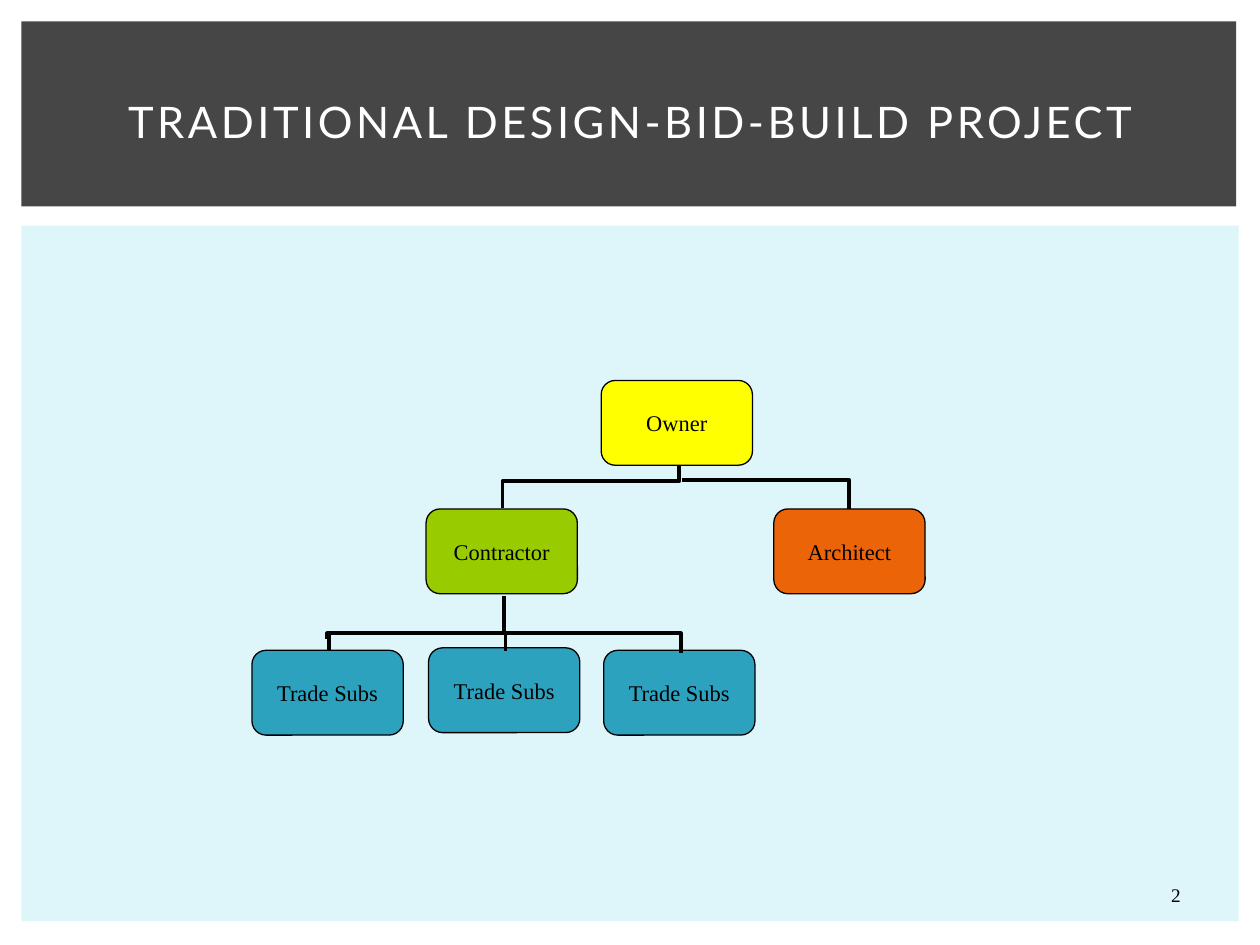
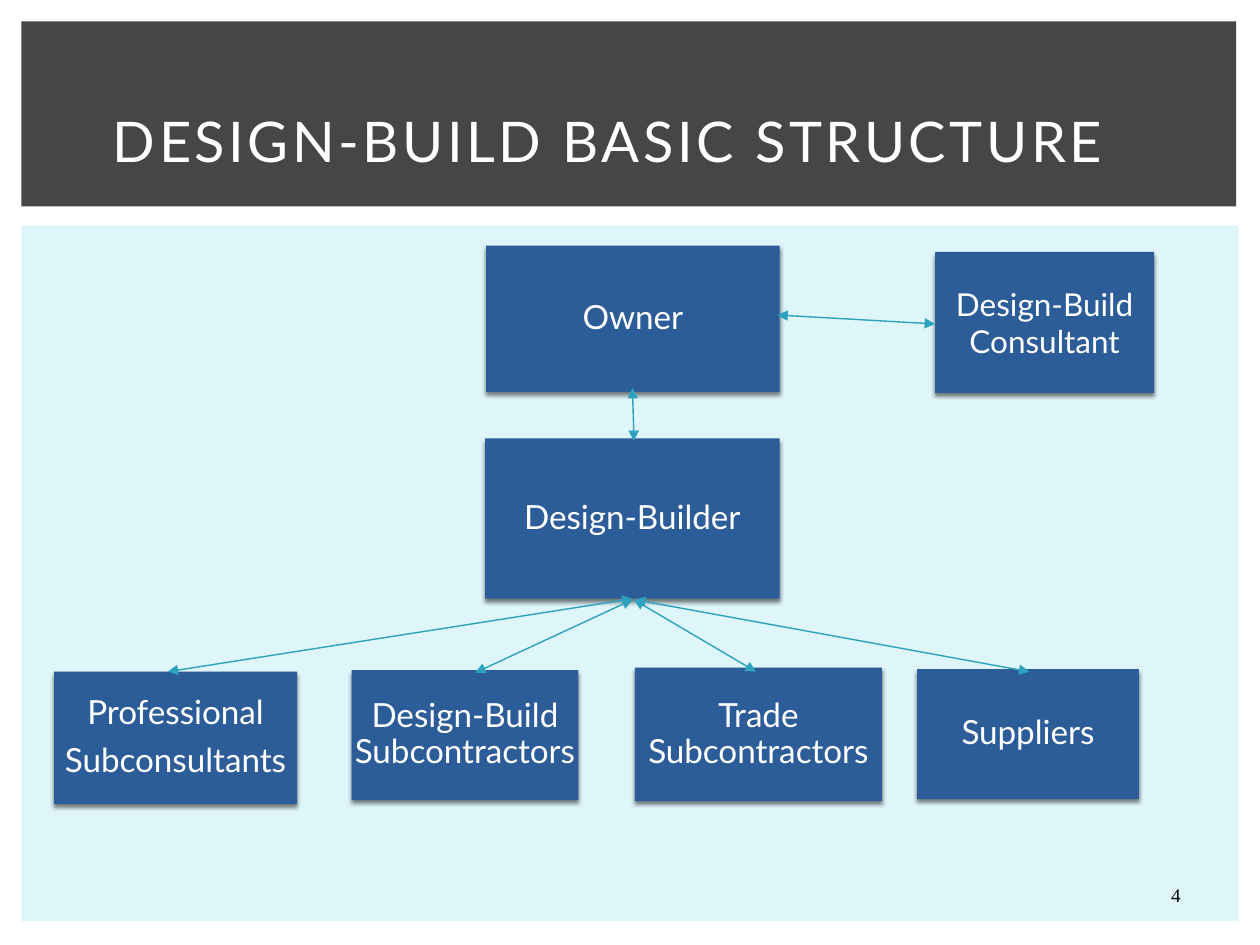
"""Build two slides that compare project delivery structures."""
from lxml import etree
from pptx import Presentation
from pptx import util as u
from pptx.dml.color import RGBColor
from pptx.enum import shapes, text
from pptx.oxml import ns

WHITE = RGBColor(0xFF, 0xFF, 0xFF)
BLACK = RGBColor(0x00, 0x00, 0x00)
CHARCOAL = RGBColor(0x46, 0x46, 0x46)
PALE_BLUE = RGBColor(0xDE, 0xF5, 0xFA)
TEAL = RGBColor(0x2D, 0xA2, 0xBF)
NAVY = RGBColor(0x2C, 0x5D, 0x98)
GREEN = RGBColor(0x99, 0xCC, 0x00)
ORANGE = RGBColor(0xEC, 0x64, 0x08)
YELLOW = RGBColor(0xFF, 0xFF, 0x00)
SANS, SERIF = "Lato", "Times New Roman"

BANDS = [
    ((0.43, 4.55, 24.54, 14.02), PALE_BLUE),
    ((0.43, 0.43, 24.49, 3.73), CHARCOAL),
]
NUMBER_AREA = (22.89, 17.65, 1.63, 0.76)

TRADITIONAL = {
    "title": "TRADITIONAL DESIGN-BID-BUILD PROJECT",
    "title_area": (1.07, 0.99, 23.29, 2.92),
    "title_size": 24.8,
    "number": "2",
}
PARTY_SIZE = (3.05, 1.71)
PARTIES = [
    ("Contractor", (8.59, 10.26), GREEN),
    ("Trade Subs", (5.08, 13.11), TEAL),
    ("Trade Subs", (8.64, 13.06), TEAL),
    ("Trade Subs", (12.17, 13.11), TEAL),
    ("Architect", (15.6, 10.26), ORANGE),
    ("Owner", (12.12, 7.67), YELLOW),
]
ELBOWS = [
    ((6.6, 12.88), (10.16, 12.01), 0.13),
    ((13.72, 12.88), (10.16, 12.01), 0.13),
    ((10.13, 10.24), (13.69, 9.4), 0.64),
    ((17.12, 10.26), (13.74, 9.68), None),
]
DROPS = [
    ((10.19, 12.73), (10.19, 13.13)),
    ((13.72, 12.78), (13.72, 13.16)),
    ((6.63, 12.73), (6.63, 13.13)),
]

DESIGN_BUILD = {
    "title": "DESIGN-BUILD BASIC STRUCTURE",
    "title_area": (1.78, 1.32, 20.96, 3),
    "title_size": 32,
    "number": "4",
}
TEAM_STYLE = {"size": 19, "line_spacing": 0.9, "space_after": 6.65}
CONSULTANT_STYLE = {"size": 18}
TEAM = [
    (["Design-Build Consultant"], (18.85, 5.08, 4.42, 2.84), CONSULTANT_STYLE),
    (["Owner"], (9.8, 4.95, 5.92, 2.95), TEAM_STYLE),
    (["Professional", "Subconsultants"], (1.09, 13.54, 4.9, 2.67), TEAM_STYLE),
    (["Suppliers"], (18.49, 13.49, 4.47, 2.62), TEAM_STYLE),
    (["Design-Builder"], (9.78, 8.84, 5.94, 3.23), TEAM_STYLE),
    (["Trade Subcontractors"], (12.8, 13.46, 4.98, 2.69), TEAM_STYLE),
    (["Design-Build Subcontractors"], (7.09, 13.51, 4.57, 2.62), TEAM_STYLE),
]
ARROWS = [
    ((18.85, 6.53), (15.67, 6.35)),
    ((12.75, 7.82), (12.78, 8.89)),
    ((12.75, 12.07), (3.38, 13.54)),
    ((12.75, 12.09), (9.58, 13.56)),
    ((12.78, 12.09), (15.24, 13.54)),
    ((12.8, 12.09), (20.75, 13.54)),
]


def lengths(values):
    return [u.Cm(value) for value in values]


def add_child(parent, tag, **attributes):
    child = etree.SubElement(parent, ns.qn(tag))
    for name, value in attributes.items():
        child.set(name, str(value))
    return child


def write(shape, paragraphs, size, font=SANS, color=WHITE, spacing=0,
          insets=(0.25, 0.13), wrap=True, line_spacing=None, space_after=None):
    frame = shape.text_frame
    frame.word_wrap = wrap
    frame.vertical_anchor = text.MSO_ANCHOR.MIDDLE
    frame.margin_left = frame.margin_right = u.Cm(insets[0])
    frame.margin_top = frame.margin_bottom = u.Cm(insets[1])
    for index, words in enumerate(paragraphs):
        paragraph = frame.add_paragraph() if index else frame.paragraphs[0]
        paragraph.alignment = text.PP_ALIGN.CENTER
        if line_spacing:
            paragraph.line_spacing = line_spacing
        if space_after:
            paragraph.space_after = u.Pt(space_after)
        run = paragraph.add_run()
        run.text = words
        run.font.size = u.Pt(size)
        run.font.name = font
        run.font.color.rgb = color
        if spacing:
            run.font._element.set("spc", str(spacing * 100))


def add_box(slide, area, fill, kind=shapes.MSO_SHAPE.RECTANGLE, outline=None):
    shape = slide.shapes.add_shape(kind, *lengths(area))
    shape.fill.solid()
    shape.fill.fore_color.rgb = fill
    if outline is None:
        shape.line.fill.background()
    else:
        shape.line.color.rgb = outline
        shape.line.width = u.Pt(0.75)
    shape.shadow.inherit = False
    return shape


def add_shadow(shape):
    effects = shape.element.spPr.find(ns.qn("a:effectLst"))
    shadow = add_child(effects, "a:outerShdw", blurRad=u.Pt(2.5), dist=u.Pt(2),
                       dir=90 * 60000, rotWithShape=0)
    color = add_child(shadow, "a:srgbClr", val=BLACK)
    add_child(color, "a:alpha", val=50000)


def add_line(slide, start, end, color, width, arrows=False,
             kind=shapes.MSO_CONNECTOR.STRAIGHT):
    line = slide.shapes.add_connector(kind, *lengths(start + end))
    line.line.color.rgb = color
    line.line.width = u.Pt(width)
    properties = line.element.spPr
    if arrows:
        outline = properties.find(ns.qn("a:ln"))
        for tag in ("a:headEnd", "a:tailEnd"):
            add_child(outline, tag, type="triangle")
    add_child(properties, "a:effectLst")
    return line


def add_elbow(slide, start, end, bend):
    """Rise from start, then turn towards end."""
    elbow = add_line(slide, start, end, BLACK, 2.25,
                     kind=shapes.MSO_CONNECTOR.ELBOW)
    (x1, y1), (x2, y2) = start, end
    rise, run = y1 - y2, abs(x2 - x1)
    elbow.left, elbow.top, elbow.width, elbow.height = lengths(
        ((x1 + x2 - rise) / 2, (y1 + y2 - run) / 2, rise, run))
    frame = elbow.element.spPr.find(ns.qn("a:xfrm"))
    for flip in ("flipH", "flipV"):
        frame.attrib.pop(flip, None)
    frame.set("rot", str(270 * 60000))
    if x2 < x1:
        frame.set("flipV", "1")
    geometry = elbow.element.spPr.find(ns.qn("a:prstGeom"))
    if bend is None:
        geometry.set("prst", "bentConnector2")
    else:
        add_child(geometry.find(ns.qn("a:avLst")), "a:gd", name="adj1",
                  fmla=f"val {round(bend * 100000)}")


def add_base_slide(presentation, content):
    slide = presentation.slides.add_slide(presentation.slide_layouts[6])
    for area, fill in BANDS:
        add_box(slide, area, fill)
    title = slide.shapes.add_textbox(*lengths(content["title_area"]))
    write(title, [content["title"]], content["title_size"], spacing=2)
    number = slide.shapes.add_textbox(*lengths(NUMBER_AREA))
    write(number, [content["number"]], 11, font=SERIF, color=BLACK)
    return slide


def build_traditional(presentation):
    slide = add_base_slide(presentation, TRADITIONAL)
    for name, position, fill in PARTIES:
        box = add_box(slide, position + PARTY_SIZE, fill,
                      shapes.MSO_SHAPE.ROUNDED_RECTANGLE, BLACK)
        write(box, [name], 12.8, font=SERIF, color=BLACK,
              insets=(0.18, 0.08), wrap=False)
    for start, end, bend in ELBOWS:
        add_elbow(slide, start, end, bend)
    for start, end in DROPS:
        add_line(slide, start, end, BLACK, 2.25)


def build_design_build(presentation):
    slide = add_base_slide(presentation, DESIGN_BUILD)
    for paragraphs, area, style in TEAM:
        box = add_box(slide, area, NAVY)
        add_shadow(box)
        write(box, paragraphs, insets=(0.03, 0.03), **style)
    for start, end in ARROWS:
        add_line(slide, start, end, TEAL, 0.79, arrows=True)


def main():
    presentation = Presentation()
    presentation.slide_width, presentation.slide_height = lengths((25.4, 19.05))
    build_traditional(presentation)
    build_design_build(presentation)
    presentation.save("out.pptx")


if __name__ == "__main__":
    main()
